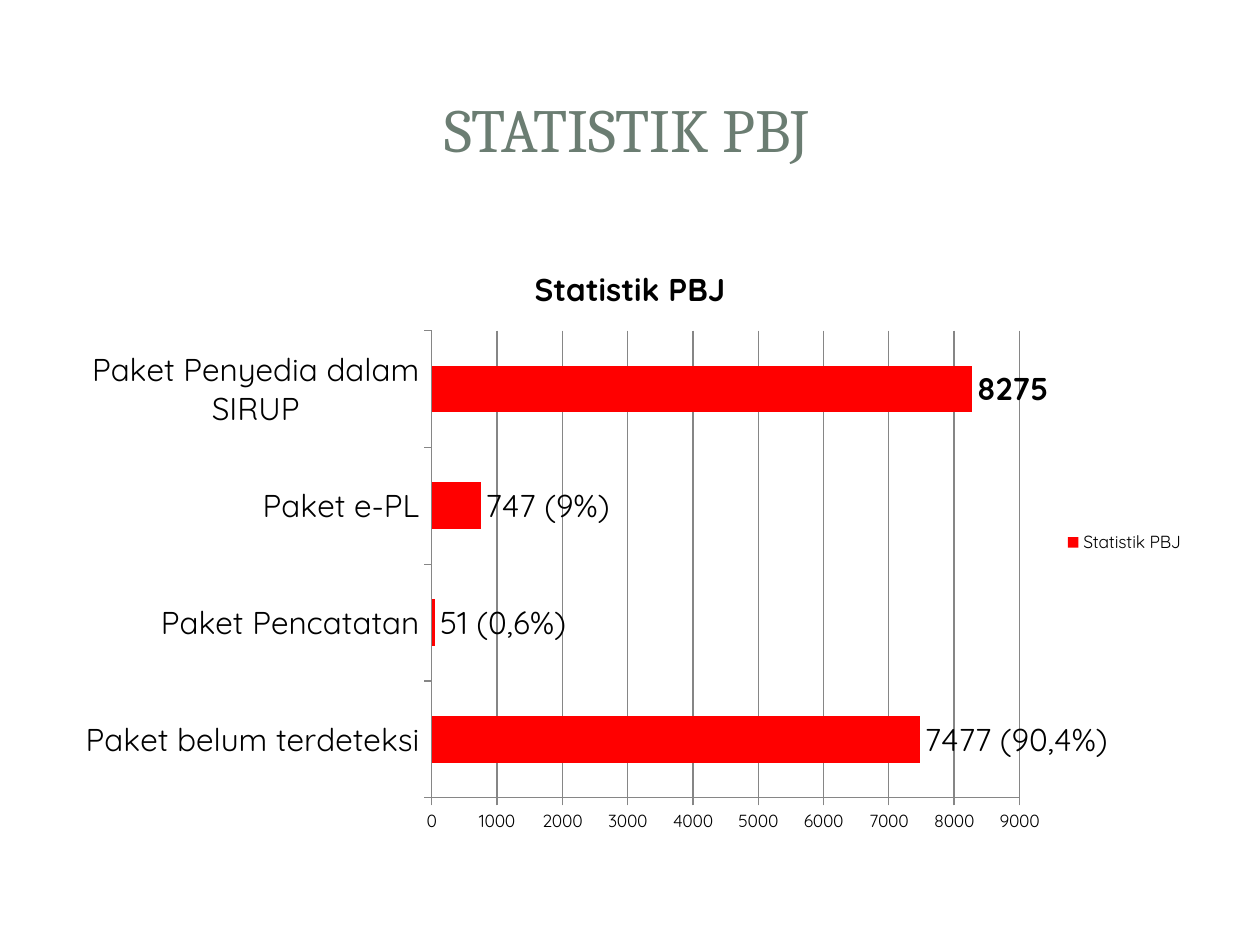
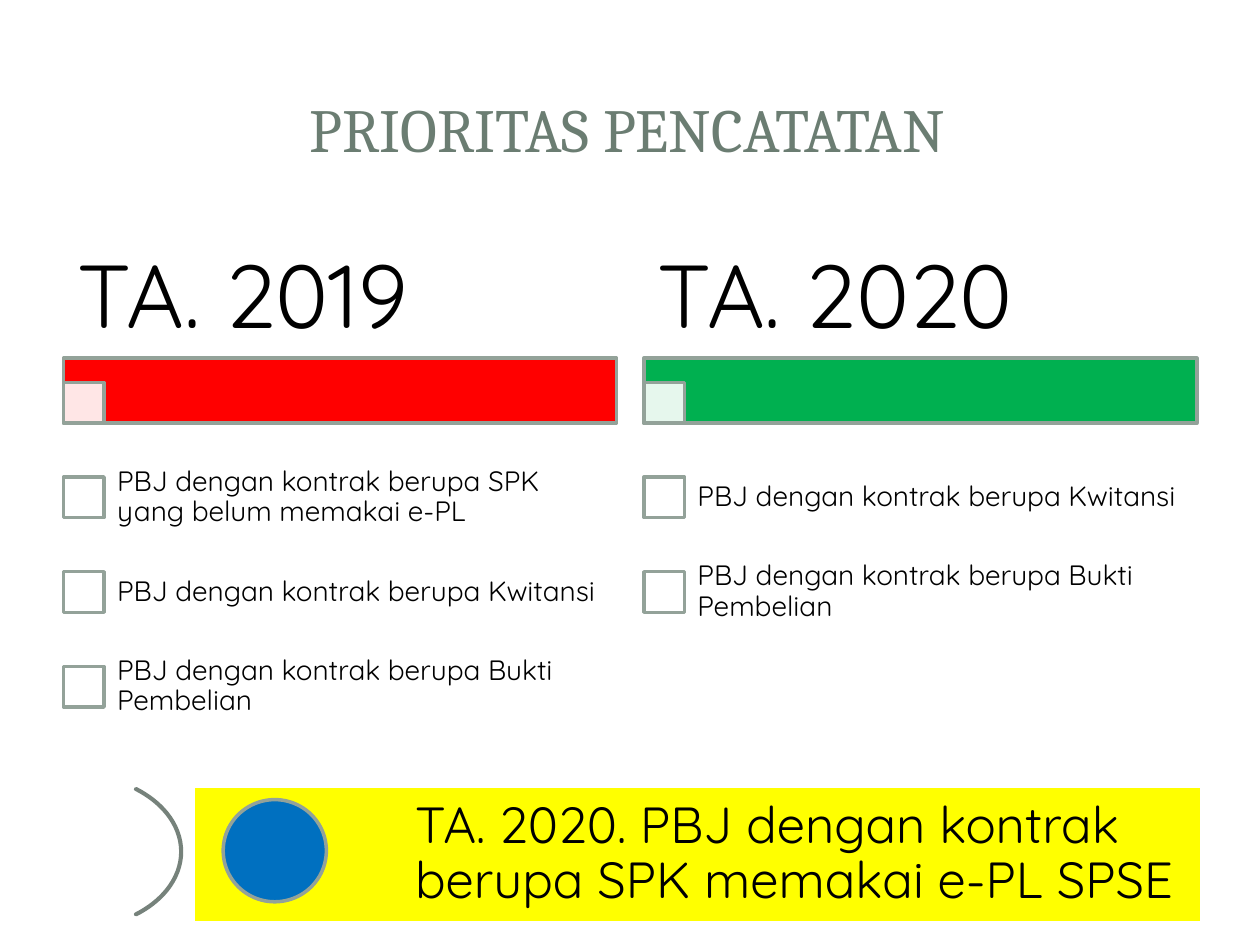
from lxml.etree import SubElement
from pptx import Presentation
from pptx.chart.data import CategoryChartData
from pptx.dml.color import RGBColor
from pptx.enum.chart import XL_CHART_TYPE as ChartType, XL_LABEL_POSITION as LabelPosition
from pptx.enum.chart import XL_LEGEND_POSITION as LegendPosition, XL_TICK_MARK as TickMark
from pptx.enum.shapes import MSO_SHAPE as Preset
from pptx.enum.text import MSO_ANCHOR as Anchor, PP_ALIGN as Align
from pptx.oxml.ns import qn
from pptx.util import Cm, Pt

color = RGBColor.from_string
BODY_FONT, TITLE_FONT = "Quicksand", "Cambria"
BLACK, WHITE, TITLE_GREEN, OUTLINE = "000000", "FFFFFF", "6B7D72", "93A299"
RED, GREEN, YELLOW, BLUE = "FF0000", "00B050", "FFFF00", "0070C0"
ARC_GRAY, GRID_GRAY = "76827B", "868686"


def add_shape(slide, preset, box, fill=None, line=OUTLINE, opacity=100):
    shape = slide.shapes.add_shape(preset, *map(Cm, box))
    shape.shadow.inherit = False
    if fill:
        shape.fill.solid()
        shape.fill.fore_color.rgb = color(fill)
        if opacity < 100:
            fill_color = shape.fill._xPr.find(qn("a:solidFill"))[0]
            SubElement(fill_color, qn("a:alpha")).set("val", str(opacity * 1000))
    else:
        shape.fill.background()
    if line:
        shape.line.color.rgb = color(line)
        shape.line.width = Pt(2)
    else:
        shape.line.fill.background()
    return shape


def write_text(shape, text, size, margins, font=BODY_FONT, text_color=BLACK, align=Align.LEFT, spacing=0.9):
    frame = shape.text_frame
    left, top, right, bottom = map(Cm, margins)
    frame_format = {
        "word_wrap": True,
        "vertical_anchor": Anchor.MIDDLE,
        "margin_left": left,
        "margin_top": top,
        "margin_right": right,
        "margin_bottom": bottom,
    }
    for name, value in frame_format.items():
        setattr(frame, name, value)
    paragraph = frame.paragraphs[0]
    paragraph.alignment = align
    paragraph.line_spacing = spacing
    run = paragraph.add_run()
    run.text = text
    for name, value in {"name": font, "size": Pt(size)}.items():
        setattr(run.font, name, value)
    run.font.color.rgb = color(text_color)


presentation = Presentation()
presentation.slide_width = Cm(25.4)
presentation.slide_height = Cm(19.05)

slides = []
for title in ("STATISTIK PBJ", "PRIORITAS PENCATATAN"):
    slide = presentation.slides.add_slide(presentation.slide_layouts[6])
    page_panel = add_shape(slide, Preset.ROUNDED_RECTANGLE, (0.25, 0.28, 24.89, 18.52), WHITE, None)
    page_panel.adjustments[0] = 0.017
    add_shape(slide, Preset.RECTANGLE, (0.76, 0.76, 23.88, 3.68), WHITE, None, 83)
    add_shape(slide, Preset.RECTANGLE, (1.04, 1.04, 23.29, 3.1), WHITE, None)
    title_box = slide.shapes.add_textbox(Cm(1.18), Cm(1.14), Cm(22.93), Cm(2.9))
    write_text(title_box, title, 35, (0.25, 0.13, 0.25, 0.13), TITLE_FONT, TITLE_GREEN, Align.CENTER, 1.0)
    slides.append(slide)
statistics_slide, priority_slide = slides

packages = [
    ("Paket belum terdeteksi", 7477, "7477 (90,4%)"),
    ("Paket Pencatatan", 51, "51 (0,6%)"),
    ("Paket e-PL", 747, "747 (9%)"),
    ("Paket Penyedia dalam SIRUP", 8275, None),
]
chart_data = CategoryChartData()
chart_data.categories = [name for name, count, label in packages]
chart_data.add_series("Statistik PBJ", [count for name, count, label in packages])
chart = statistics_slide.shapes.add_chart(
    ChartType.BAR_CLUSTERED, Cm(1.27), Cm(4.87), Cm(22.86), Cm(12.13), chart_data
).chart

chart.has_title = True
chart.chart_title.text_frame.text = "Statistik PBJ"
chart.chart_title.include_in_layout = False
chart.has_legend = True
chart.legend.position = LegendPosition.RIGHT
chart.legend.include_in_layout = False

plot = chart.plots[0]
plot.gap_width = 150
plot.vary_by_categories = False
series = plot.series[0]
series.format.fill.solid()
series.format.fill.fore_color.rgb = color(RED)
labels = series.data_labels
labels.show_value = True
labels.position = LabelPosition.OUTSIDE_END

chart_fonts = [
    (chart.font, 10, False),
    (chart.chart_title.text_frame.paragraphs[0].runs[0].font, 18, True),
    (chart.category_axis.tick_labels.font, 18, False),
    (labels.font, 18, True),
]
for index, (name, count, label) in enumerate(packages):
    if label:
        data_label = series.points[index].data_label
        data_label.text_frame.text = label
        data_label.position = LabelPosition.OUTSIDE_END
        chart_fonts.append((data_label.text_frame.paragraphs[0].runs[0].font, 18, False))
for font, size, bold in chart_fonts:
    for name, value in {"name": BODY_FONT, "size": Pt(size), "bold": bold}.items():
        setattr(font, name, value)
    font.color.rgb = color(BLACK)

value_axis = chart.value_axis
for name, value in {"minimum_scale": 0, "maximum_scale": 9000, "major_unit": 1000}.items():
    setattr(value_axis, name, value)
value_axis.has_major_gridlines = True
for axis in (chart.category_axis, value_axis):
    axis.major_tick_mark = TickMark.OUTSIDE
for axis_part in (chart.category_axis, value_axis, value_axis.major_gridlines):
    axis_part.format.line.color.rgb = color(GRID_GRAY)
    axis_part.format.line.width = Pt(0.75)

years = [
    ("TA. 2019", RED, [
        "PBJ dengan kontrak berupa SPK yang belum memakai e-PL",
        "PBJ dengan kontrak berupa Kwitansi",
        "PBJ dengan kontrak berupa Bukti Pembelian",
    ]),
    ("TA. 2020", GREEN, [
        "PBJ dengan kontrak berupa Kwitansi",
        "PBJ dengan kontrak berupa Bukti Pembelian",
    ]),
]
column_width, column_step = 11.15, 11.7
check_size, row_height = 0.82, 1.91
for column, (year, bar_color, items) in enumerate(years):
    left = 1.28 + column * column_step
    add_shape(priority_slide, Preset.RECTANGLE, (left, 7.22, column_width, 1.31), bar_color)
    add_shape(priority_slide, Preset.RECTANGLE, (left, 7.71, check_size, check_size), WHITE, opacity=90)
    heading = priority_slide.shapes.add_textbox(Cm(left), Cm(4.87), Cm(column_width), Cm(2.35))
    write_text(heading, year, 51, (0.28, 0.18, 0.28, 0.18))
    for row, item in enumerate(items):
        top = 9.07 + row * row_height
        check_top = top + (row_height - check_size) / 2
        add_shape(priority_slide, Preset.RECTANGLE, (left, check_top, check_size, check_size), WHITE)
        item_box = priority_slide.shapes.add_textbox(
            Cm(left + 0.78), Cm(top), Cm(column_width - 0.78), Cm(row_height)
        )
        write_text(item_box, item, 16, (0.3, 0.3, 0.3, 0.3))

arc = add_shape(priority_slide, Preset.BLOCK_ARC, (-0.71, 15.61, 4.37, 3.12), line=ARC_GRAY)
for index, value in enumerate((189, 27, 0.004)):
    arc.adjustments[index] = value
banner = add_shape(priority_slide, Preset.RECTANGLE, (3.89, 15.85, 20.33, 2.76), YELLOW, WHITE)
write_text(banner, "TA. 2020. PBJ dengan kontrak berupa SPK memakai e-PL SPSE", 29, (4.48, 0.2, 0.2, 0.2))
add_shape(priority_slide, Preset.OVAL, (4.5, 16.12, 2.08, 2.06), BLUE)

presentation.save("out.pptx")
